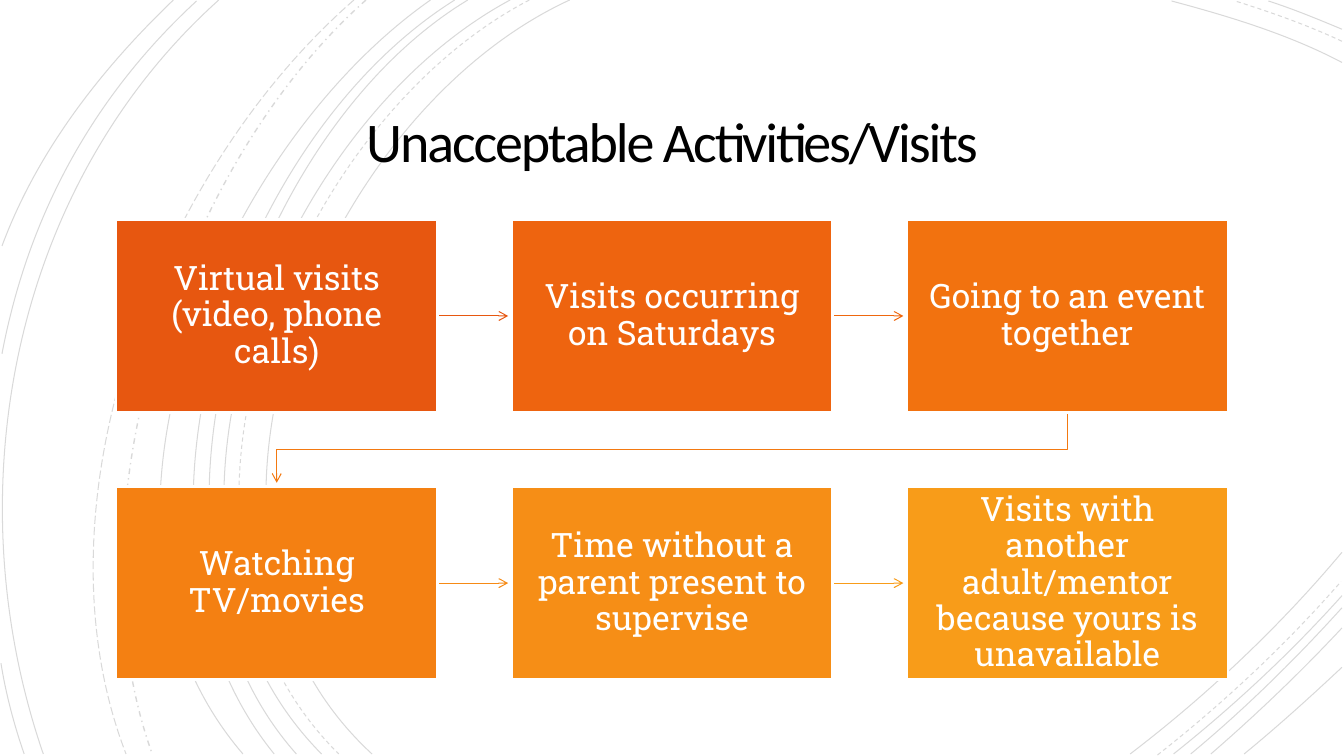
from dataclasses import dataclass
from typing import NamedTuple

from lxml import etree
from pptx import Presentation
from pptx.dml.color import RGBColor
from pptx.enum.dml import MSO_LINE
from pptx.enum.shapes import MSO_CONNECTOR, MSO_SHAPE
from pptx.enum.text import MSO_ANCHOR, PP_ALIGN
from pptx.oxml.ns import qn
from pptx.util import Inches, Pt

RECTANGLE = MSO_SHAPE.RECTANGLE
STRAIGHT = MSO_CONNECTOR.STRAIGHT
CENTER = PP_ALIGN.CENTER
MIDDLE = MSO_ANCHOR.MIDDLE
DASH = MSO_LINE.DASH
DASH_DOT = MSO_LINE.DASH_DOT
LONG_DASH = MSO_LINE.LONG_DASH
RIGHT_SIDE = 3

COLORS = {
    "black": "000000",
    "white": "FFFFFF",
    "virtual": "E75710",
    "saturdays": "EE640F",
    "event": "F2720F",
    "movies": "F48012",
    "unsupervised": "F68E16",
    "substitute": "F89C19",
    "arrow 1": "E75710",
    "arrow 2": "EF670E",
    "arrow 3": "F37911",
    "arrow 4": "F68A15",
    "arrow 5": "F89C19",
}

COLUMNS = 3
BOX_LEFT, BOX_TOP = 1.15, 2.18
BOX_WIDTH, BOX_HEIGHT = 3.19, 1.91
COLUMN_STEP, ROW_STEP = 3.92, 2.65
ARROW_LENGTH = 0.7
TURN_DROP = 0.37
CURVE_OPACITY = 15

Point = tuple[float, float]


class Curve(NamedTuple):
    start: Point
    first_control: Point
    second_control: Point
    end: Point
    dash: MSO_LINE | None = None
    width: float = 0.75


@dataclass
class Activity:
    text: str
    fill: str
    arrow: str | None


CURVES = [
    Curve((5.65, 0), (3.15, 1.15), (1.43, 5.4), (3.69, 7.48)),
    Curve((13.31, 0.62), (12.78, 0.34), (12.18, 0.16), (11.62, 0.01)),
    Curve((11.21, 7.48), (11.97, 6.9), (12.69, 6.22), (13.31, 5.48)),
    Curve((5.25, 0), (2.85, 1.25), (1.23, 5.37), (3.36, 7.48), DASH),
    Curve((13.31, 0.41), (12.97, 0.25), (12.6, 0.12), (12.25, 0.01), DASH),
    Curve((11.48, 7.49), (12.13, 6.98), (12.75, 6.4), (13.3, 5.77), DASH),
    Curve((5.06, 0), (2.7, 1.27), (1.1, 5.37), (3.19, 7.48)),
    Curve((13.31, 0.29), (13.07, 0.19), (12.83, 0.09), (12.58, 0.01)),
    Curve((11.64, 7.48), (12.23, 7.01), (12.8, 6.48), (13.31, 5.91)),
    Curve((4.64, 0), (2.44, 1.33), (1.1, 5.41), (2.94, 7.48)),
    Curve((11.81, 7.48), (12.34, 7.04), (12.84, 6.55), (13.31, 6.03)),
    Curve((4.51, 0), (2.31, 1.38), (0.97, 5.33), (2.72, 7.48)),
    Curve((12.01, 7.48), (12.46, 7.09), (12.9, 6.67), (13.31, 6.23)),
    Curve((4.27, 0), (2.17, 1.47), (0.53, 5.29), (2.41, 7.48)),
    Curve((12.34, 7.48), (12.67, 7.21), (12.99, 6.92), (13.31, 6.62)),
    Curve((3.63, 0), (1.76, 1.66), (0.65, 5.09), (1.51, 7.48), DASH_DOT, 1),
    Curve((3.51, 0), (1.57, 1.69), (0.29, 4.99), (1.25, 7.48), LONG_DASH),
    Curve((2.17, 0), (0.11, 1.85), (-0.46, 4.9), (0.43, 7.48)),
    Curve((1.95, 0.01), (0.92, 0.96), (0.28, 2.14), (0.02, 3.51)),
    Curve((0.01, 6.58), (0.06, 6.89), (0.14, 7.19), (0.24, 7.48)),
    Curve((1.72, 0), (1, 0.69), (0.37, 1.5), (0.02, 2.44)),
]

ACTIVITIES = [
    Activity("Virtual visits (video, phone calls)", "virtual", "arrow 1"),
    Activity("Visits occurring on Saturdays", "saturdays", "arrow 2"),
    Activity("Going to an event together", "event", "arrow 3"),
    Activity("Watching TV/movies", "movies", "arrow 4"),
    Activity("Time without a parent present to supervise", "unsupervised", "arrow 5"),
    Activity("Visits with another adult/mentor because yours is unavailable",
             "substitute", None),
]


def color(name: str) -> RGBColor:
    return RGBColor.from_string(COLORS[name])


def set_line(shape, color_name: str, width: float) -> None:
    shape.line.color.rgb = color(color_name)
    shape.line.width = Pt(width)


def add_outline(slide, points: list[Point], color_name: str, width: float):
    """Draw an open, unfilled outline through the points."""
    start, *others = [(Inches(x), Inches(y)) for x, y in points]
    builder = slide.shapes.build_freeform(*start)
    builder.add_line_segments(others, close=False)
    shape = builder.convert_to_shape()
    shape.shadow.inherit = False
    shape.fill.background()
    set_line(shape, color_name, width)
    return shape


def add_curve(slide, curve: Curve) -> None:
    """Draw the control polygon, then bend its segments into one Bézier curve."""
    points = [curve.start, curve.first_control, curve.second_control, curve.end]
    shape = add_outline(slide, points, "black", curve.width)
    shape.line.dash_style = curve.dash
    outline = next(shape.element.iter(qn("a:path")))
    bezier = etree.SubElement(outline, qn("a:cubicBezTo"))
    for segment in outline.findall(qn("a:lnTo")):
        bezier.append(segment[0])
        outline.remove(segment)
    line_color = next(shape.element.spPr.get_or_add_ln().iter(qn("a:srgbClr")))
    etree.SubElement(line_color, qn("a:alpha"), val=str(CURVE_OPACITY * 1000))


def add_arrowhead(shape) -> None:
    etree.SubElement(shape.element.spPr.get_or_add_ln(), qn("a:tailEnd"), type="arrow")


def set_text(shape, text: str, font: str, size: float, color_name: str,
             inset: float, spacing: float):
    frame = shape.text_frame
    frame.word_wrap = True
    frame.vertical_anchor = MIDDLE
    frame.margin_left = frame.margin_right = Inches(inset)
    frame.margin_top = frame.margin_bottom = Inches(inset)
    paragraph = frame.paragraphs[0]
    paragraph.text = text
    paragraph.alignment = CENTER
    paragraph.line_spacing = spacing
    paragraph.font.name = font
    paragraph.font.size = Pt(size)
    paragraph.font.color.rgb = color(color_name)
    return paragraph


def add_title(slide) -> None:
    title = slide.shapes.add_textbox(Inches(1.92), Inches(0.87), Inches(9.49), Inches(1.15))
    paragraph = set_text(title, "Unacceptable Activities/Visits", "Calibri", 40,
                         "black", 0.25, 0.85)
    paragraph.runs[0].font._element.set("spc", "-150")


def add_activity(slide, activity: Activity, left: float, top: float):
    box = slide.shapes.add_shape(RECTANGLE, Inches(left), Inches(top),
                                 Inches(BOX_WIDTH), Inches(BOX_HEIGHT))
    box.shadow.inherit = False
    box.fill.solid()
    box.fill.fore_color.rgb = color(activity.fill)
    set_line(box, "white", 2)
    set_text(box, activity.text, "Roboto Slab", 24, "white", 0.16, 0.9)
    return box


def add_arrow_right(slide, box, color_name: str) -> None:
    """Point from the box's right side towards the next column, behind the box."""
    side, middle = box.left + box.width, box.top + box.height // 2
    arrow = slide.shapes.add_connector(STRAIGHT, side, middle,
                                       side + Inches(ARROW_LENGTH), middle)
    arrow.begin_connect(box, RIGHT_SIDE)
    set_line(arrow, color_name, 0.75)
    add_arrowhead(arrow)
    etree.SubElement(arrow.element.spPr, qn("a:effectLst"))
    box.element.addprevious(arrow.element)


def add_arrow_to_next_row(slide, box, left: float, top: float, color_name: str) -> None:
    start_x, end_x = left + BOX_WIDTH / 2, BOX_LEFT + BOX_WIDTH / 2
    start_y = top + BOX_HEIGHT
    turn_y, end_y = start_y + TURN_DROP, start_y + ARROW_LENGTH
    points = [(start_x, start_y), (start_x, turn_y), (end_x, turn_y), (end_x, end_y)]
    arrow = add_outline(slide, points, color_name, 0.75)
    add_arrowhead(arrow)
    box.element.addprevious(arrow.element)


def main() -> None:
    presentation = Presentation()
    presentation.slide_width, presentation.slide_height = Inches(13.33), Inches(7.5)
    slide = presentation.slides.add_slide(presentation.slide_layouts[6])
    for curve in CURVES:
        add_curve(slide, curve)
    add_title(slide)
    for index, activity in enumerate(ACTIVITIES):
        row, column = divmod(index, COLUMNS)
        left, top = BOX_LEFT + column * COLUMN_STEP, BOX_TOP + row * ROW_STEP
        box = add_activity(slide, activity, left, top)
        if activity.arrow and column < COLUMNS - 1:
            add_arrow_right(slide, box, activity.arrow)
        elif activity.arrow:
            add_arrow_to_next_row(slide, box, left, top, activity.arrow)
    presentation.save("out.pptx")


if __name__ == "__main__":
    main()
